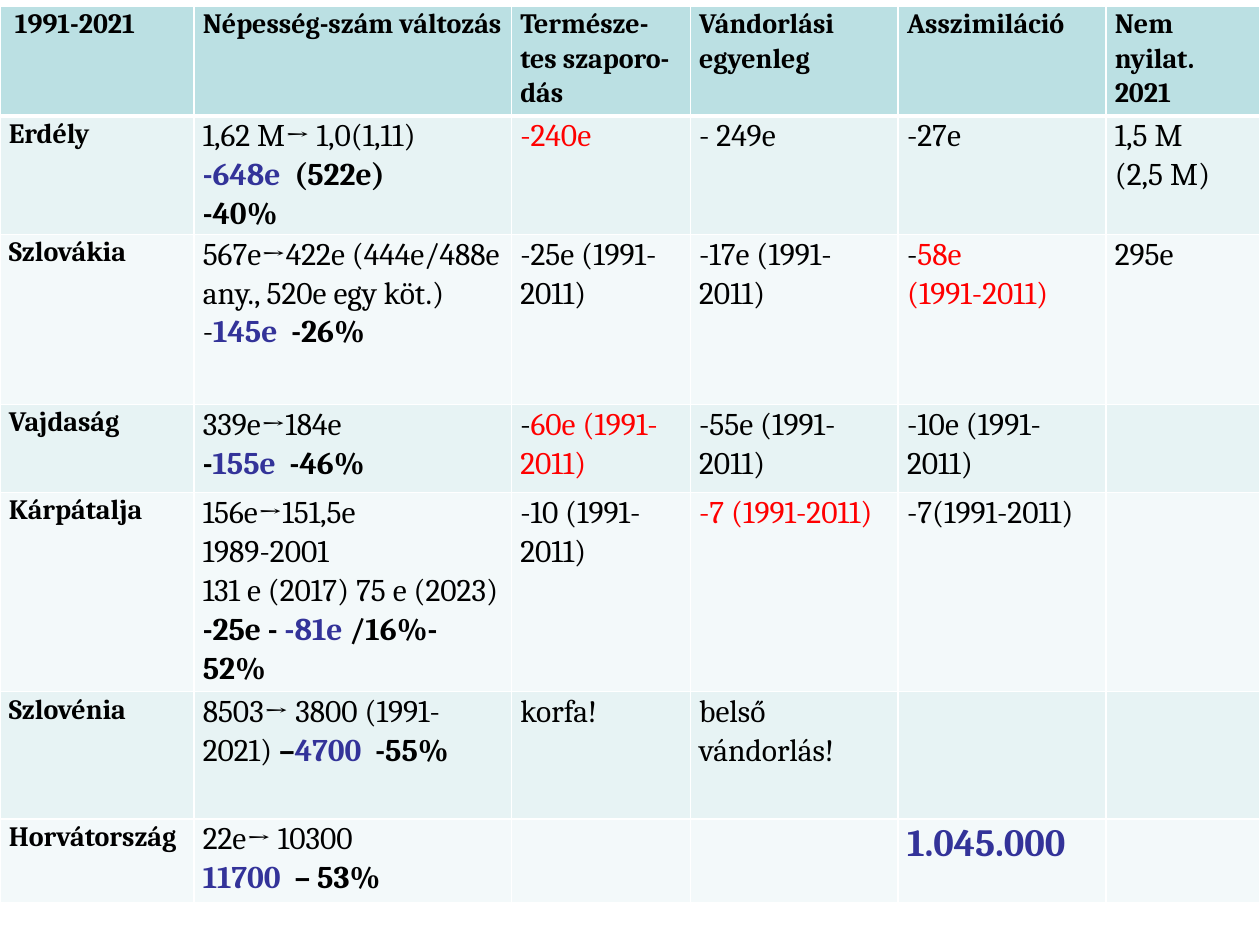
from dataclasses import dataclass

from lxml import etree
from pptx import Presentation
from pptx.dml.color import RGBColor
from pptx.oxml.ns import qn
from pptx.util import Inches, Pt


@dataclass(frozen=True)
class Theme:
    font: str = "Cambria"
    black: str = "000000"
    blue: str = "333399"
    red: str = "FF0000"
    rule: str = "FFFFFF"
    header: str = "BBE0E3"
    bands: tuple = ("E7F3F4", "F3F9FA")
    label_size: int = 16
    body_size: int = 18
    total_size: int = 22
    line_spacing: float = 1.07
    thin: int = 1
    thick: int = 3


THEME = Theme()
STYLES = {
    "label": dict(size=THEME.label_size, bold=True),
    "plain": {},
    "bold": dict(bold=True),
    "blue": dict(bold=True, color=THEME.blue),
    "red": dict(color=THEME.red),
    "total": dict(size=THEME.total_size, bold=True, color=THEME.blue),
}

COLUMN_WIDTHS = [1.54, 2.52, 1.42, 1.65, 1.65, 1.22]
ROW_HEIGHTS = [0.87, 0.94, 1.35, 0.7, 1.58, 1.01, 0.67]

HEADINGS = ["\u00a01991-2021", "Népesség-szám változás", "Természe-tes szaporo-dás",
            "Vándorlási egyenleg", "Asszimiláció", "Nem nyilat.  2021"]

REGIONS = {
    "Erdély": [
        ["1,62 M→ 1,0(1,11)", [("-648e  ", "blue"), ("(522e)", "bold")], [("-40%", "bold")]],
        [[("-240e", "red")]],
        ["- 249e"],
        ["-27e"],
        ["1,5 M", "(2,5 M)"],
    ],
    "Szlovákia": [
        ["567e→422e (444e/488e any., 520e egy köt.)",
         [("-", "plain"), ("145e", "blue"), ("  -26%", "bold")]],
        ["-25e (1991-2011)"],
        ["-17e (1991-", "2011)"],
        [[("-", "plain"), ("58e", "red")], [("(1991-2011)", "red")]],
        ["295e"],
    ],
    "Vajdaság": [
        ["339e→184e", [("-", "bold"), ("155e", "blue"), ("  -46%", "bold")]],
        [[("-", "plain"), ("60e (1991-2011)", "red")]],
        ["-55e (1991-2011)"],
        ["-10e (1991-2011)"],
        [],
    ],
    "Kárpátalja": [
        ["156e→151,5e", "1989-2001",
         [("131 e (2017) 75 e (2023) ", "plain"), ("-25e - ", "bold"),
          ("-81e ", "blue"), ("/16%- 52%", "bold")]],
        ["-10 (1991-2011)"],
        [[("-7 (1991-2011)", "red")]],
        ["-7(1991-2011)"],
        [],
    ],
    "Szlovénia": [
        [[("8503→ 3800 (1991-2021) ", "plain"), ("–", "bold"),
          ("4700  ", "blue"), ("-55%", "bold")]],
        ["korfa!"],
        ["belső vándorlás!"],
        [],
        [],
    ],
    "Horvátország": [
        ["22e→ 10300", [("11700", "blue"), ("  – 53%", "bold")]],
        [],
        [],
        [[("1.045.000", "total")]],
        [],
    ],
}


def add_span(para, text, size=THEME.body_size, bold=False, color=THEME.black):
    span = para.add_run()
    span.text = text
    span.font.name = THEME.font
    span.font.size = Pt(size)
    span.font.bold = bold
    span.font.color.rgb = RGBColor.from_string(color)


def write_cell(cell, paragraphs):
    cell.margin_left = cell.margin_right = Inches(0.07)
    cell.margin_top = cell.margin_bottom = 0
    frame = cell.text_frame
    frame.word_wrap = True
    for index, spans in enumerate(paragraphs):
        para = frame.add_paragraph() if index else frame.paragraphs[0]
        para.line_spacing = THEME.line_spacing
        for text, style in [(spans, "plain")] if isinstance(spans, str) else spans:
            add_span(para, text, **STYLES[style])


def paint_cell(cell, fill, top, bottom):
    properties = cell._tc.get_or_add_tcPr()
    widths = {"a:lnL": THEME.thin, "a:lnR": THEME.thin, "a:lnT": top, "a:lnB": bottom}
    for tag, width in widths.items():
        line = etree.SubElement(properties, qn(tag), w=str(Pt(width)))
        solid = etree.SubElement(line, qn("a:solidFill"))
        etree.SubElement(solid, qn("a:srgbClr"), val=THEME.rule)
    cell.fill.solid()
    cell.fill.fore_color.rgb = RGBColor.from_string(fill)


def population_table(page, left, top, width, height):
    rows = [[[[(heading, "label")]] for heading in HEADINGS]]
    rows += [[[[(region, "label")]]] + cells for region, cells in REGIONS.items()]
    table = page.shapes.add_table(len(rows), len(HEADINGS), left, top, width, height).table
    for column, share in zip(table.columns, COLUMN_WIDTHS):
        column.width = int(width * share / sum(COLUMN_WIDTHS))
    for row, share in zip(table.rows, ROW_HEIGHTS):
        row.height = int(height * share / sum(ROW_HEIGHTS))
    for r, cells in enumerate(rows):
        fill = THEME.bands[(r - 1) % 2] if r else THEME.header
        for c, paragraphs in enumerate(cells):
            cell = table.cell(r, c)
            write_cell(cell, paragraphs)
            paint_cell(cell, fill,
                       top=THEME.thick if r == 1 else THEME.thin,
                       bottom=THEME.thick if r == 0 else THEME.thin)


def main():
    deck = Presentation()
    deck.slide_width, deck.slide_height = Inches(10), Inches(7.5)
    page = deck.slides.add_slide(deck.slide_layouts[6])
    population_table(page, 0, Inches(0.05), deck.slide_width, Inches(sum(ROW_HEIGHTS)))
    deck.save("out.pptx")


if __name__ == "__main__":
    main()
